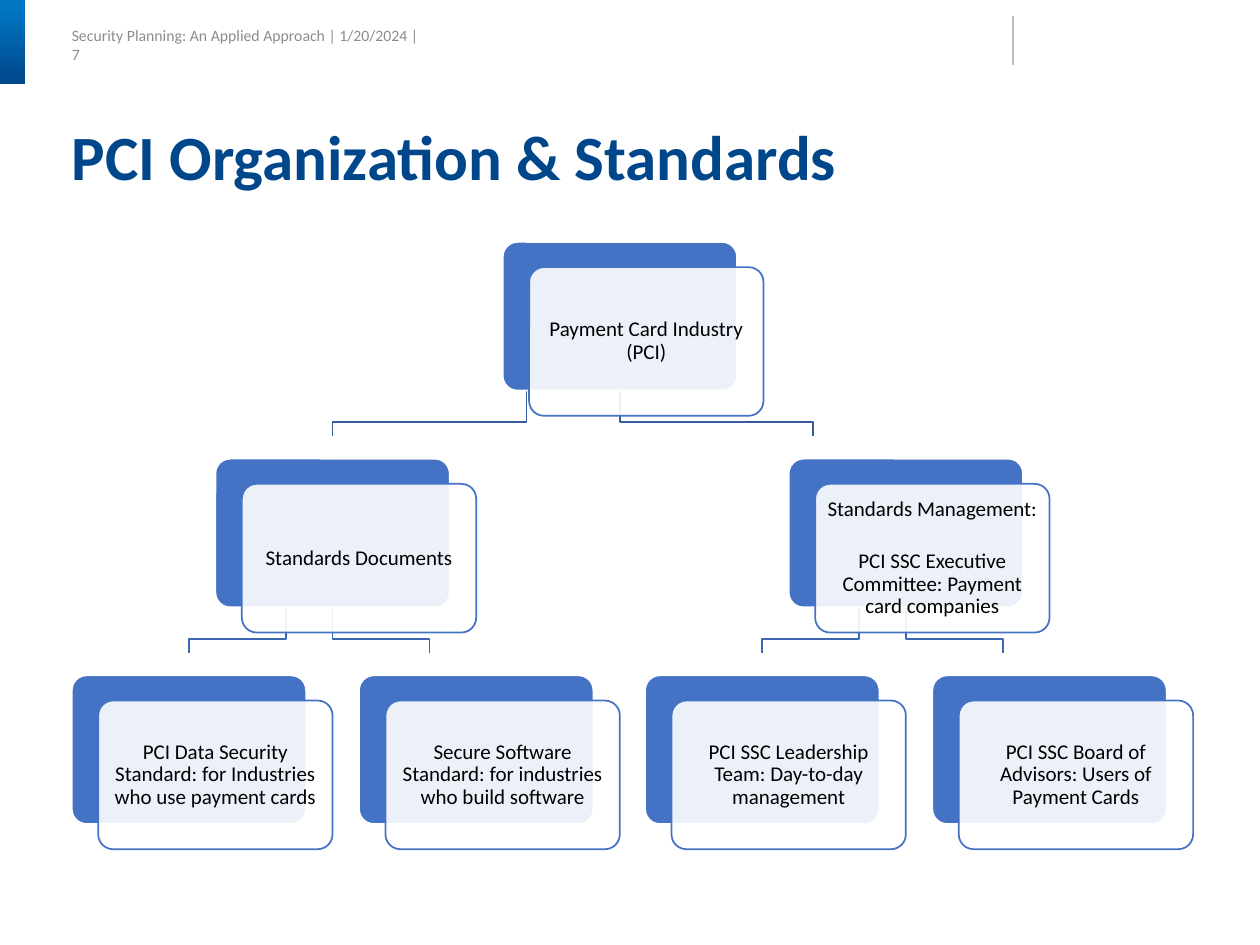
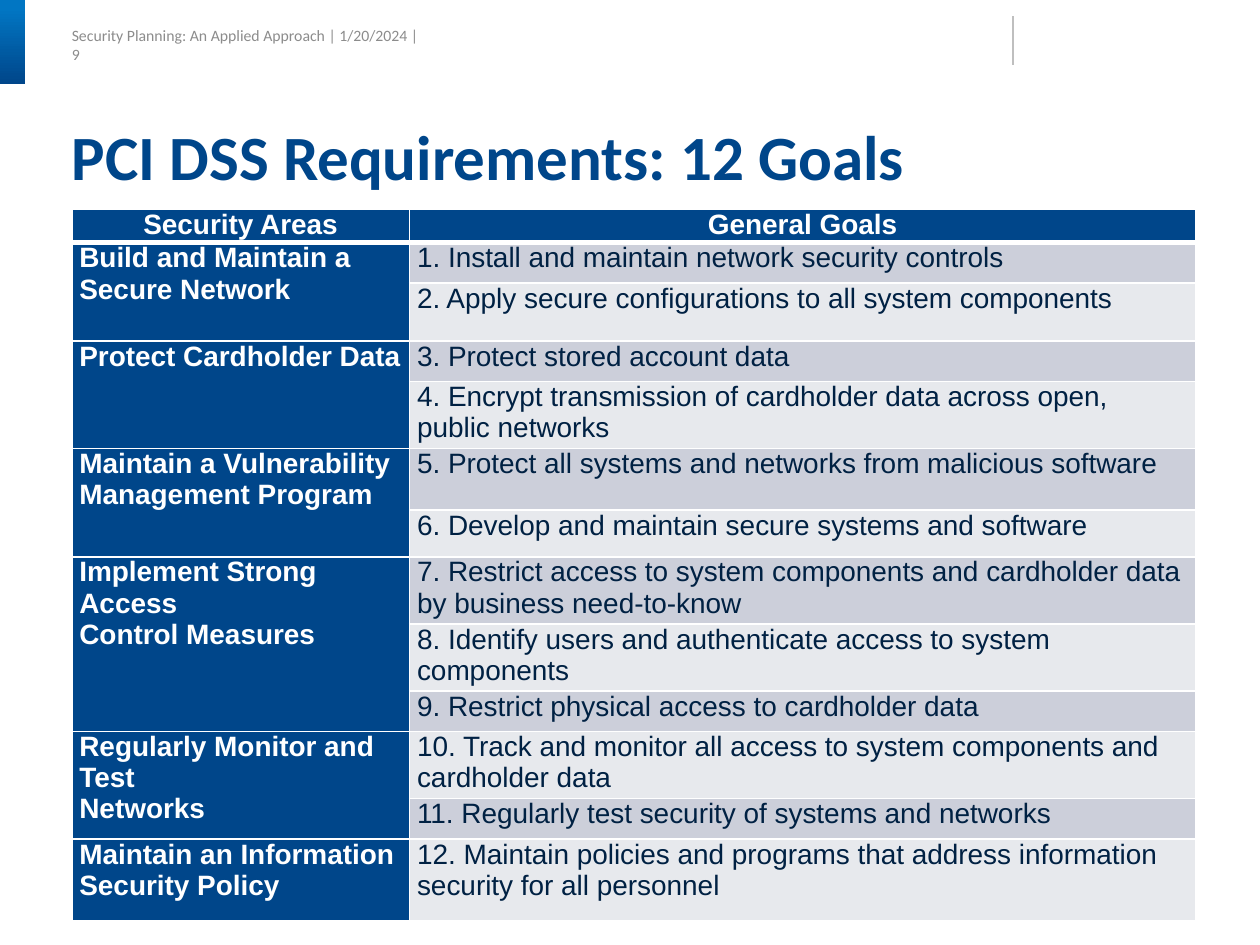
import dataclasses
import typing

import lxml.etree
import pptx
import pptx.dml.color
import pptx.enum.shapes
import pptx.enum.text
import pptx.oxml.ns
import pptx.util

PX = 9144  # EMU per px, 100 px to the inch
NAVY, BLUE, GREY, RULE = "00468A", "0176C3", "8C8C8C", "BFBFBF"
WHITE, BLACK, CARD, INK = "FFFFFF", "000000", "4472C4", "002143"
BANDS = ("E7E9ED", "CCCFDA")
LEFT, WIDTH = 57, 892
SHAPE = pptx.enum.shapes.MSO_SHAPE
ALIGN = pptx.enum.text.PP_ALIGN
ANCHOR = pptx.enum.text.MSO_ANCHOR

# Organization chart
CARD_W, CARD_H = 186, 118
LEAF_PITCH, LEVEL_PITCH, CHART_TOP = 227.6, 172, 192
FRONT_DX, FRONT_DY = 21, 20
BRANCH_REACH, BRANCH_BEND, BRANCH_DROP = 0.675, 25, 36
BRANCH_COLORS = ("365B9D", "3E67B2")


@dataclasses.dataclass
class Unit:
    text: str
    slot: int = 0
    children: tuple["Unit", ...] = ()

    @property
    def left(self) -> int:
        """Leaves stand on a grid; a parent is centred over its children."""
        if self.children:
            return (self.children[0].left + self.children[-1].left + 1) // 2
        return round(LEFT + LEAF_PITCH * self.slot)

    @property
    def center(self) -> int:
        return self.left + CARD_W // 2


@dataclasses.dataclass
class Area:
    name: str
    goals: tuple[str, ...]


ORGANIZATION = Unit("Payment Card Industry (PCI)", children=(
    Unit("Standards Documents", children=(
        Unit("PCI Data Security Standard: for Industries who use payment cards", 0),
        Unit("Secure Software Standard: for industries who build software", 1))),
    Unit("Standards Management:\nPCI SSC Executive Committee: Payment card companies", children=(
        Unit("PCI SSC Leadership Team: Day-to-day management", 2),
        Unit("PCI SSC Board of Advisors: Users of Payment Cards", 3))),
))

AREAS = (
    Area("Build and Maintain a Secure Network", (
        "Install and maintain network security controls",
        "Apply secure configurations to all system components")),
    Area("Protect Cardholder Data", (
        "Protect stored account data",
        "Encrypt transmission of cardholder data across open, public networks")),
    Area("Maintain a Vulnerability\nManagement Program", (
        "Protect all systems and networks from malicious software",
        "Develop and maintain secure systems and software")),
    Area("Implement Strong Access\nControl Measures", (
        "Restrict access to system components and cardholder data by business need-to-know",
        "Identify users and authenticate access to system components",
        "Restrict physical access to cardholder data")),
    Area("Regularly Monitor and Test\nNetworks", (
        "Track and monitor all access to system components and cardholder data",
        "Regularly test security of systems and networks")),
    Area("Maintain an Information\nSecurity Policy", (
        "Maintain policies and programs that address information security for all personnel",)),
)
COLUMN_WIDTHS = (268, 624)
ROW_HEIGHTS = (16, 32, 46, 32, 49, 49, 37, 49, 27, 32, 49, 32, 65)


def px(*lengths: float) -> list[pptx.util.Emu]:
    return [pptx.util.Emu(round(n * PX)) for n in lengths]


def rgb(color: str) -> pptx.dml.color.RGBColor:
    return pptx.dml.color.RGBColor.from_string(color)


def sub(parent: typing.Any, tag: str, **attrs: str) -> typing.Any:
    """Append a drawing element such as a:ln."""
    return lxml.etree.SubElement(parent, pptx.oxml.ns.qn(tag), **attrs)


def set_line(sp: typing.Any, color: str, points: float) -> None:
    sp.line.color.rgb = rgb(color)
    sp.line.width = pptx.util.Pt(points)


def write(tf: typing.Any, text: str, size: int, font: str, color: str, *,
          bold: bool = False, align: typing.Any = ALIGN.LEFT,
          spacing: float = 1.0, after: int = 0) -> None:
    """Fill a text frame with one paragraph per line of text."""
    for i, line in enumerate(text.split("\n")):
        p = tf.add_paragraph() if i else tf.paragraphs[0]
        p.text = line
        p.alignment, p.line_spacing = align, spacing
        p.space_after = pptx.util.Pt(after)
        p.font.size, p.font.name, p.font.bold = pptx.util.Pt(size), font, bold
        p.font.color.rgb = rgb(color)


def set_margins(frame: typing.Any, left: int, top: int, right: int, bottom: int) -> None:
    """Works for text frames and table cells."""
    (frame.margin_left, frame.margin_top,
     frame.margin_right, frame.margin_bottom) = px(left, top, right, bottom)


def add_base_slide(prs: typing.Any, title: str, number: int) -> typing.Any:
    """Add a slide with header line, corner tab, divider and title."""
    s = prs.slides.add_slide(prs.slide_layouts[6])

    tf = s.shapes.add_textbox(*px(LEFT, 23, 284, 23)).text_frame
    tf.word_wrap, tf.vertical_anchor = False, ANCHOR.MIDDLE
    set_margins(tf, 0, 2, 0, 0)
    write(tf, f"Security Planning: An Applied Approach | 1/20/2024 | {number}",
          9, "Calibri", GREY)

    tab = s.shapes.add_shape(SHAPE.RECTANGLE, *px(0, 0, 20, 67))
    tab.shadow.inherit = False
    tab.line.fill.background()
    tab.fill.gradient()
    tab.fill.gradient_angle = 270
    for stop, color, position in zip(tab.fill.gradient_stops, (BLUE, NAVY), (0.1, 1)):
        stop.color.rgb, stop.position = rgb(color), position

    divider = s.shapes.add_connector(
        pptx.enum.shapes.MSO_CONNECTOR.STRAIGHT, *px(804, 13, 804, 52))
    set_line(divider, RULE, 0.75)
    sub(divider._element.spPr, "a:effectLst")

    tf = s.shapes.add_textbox(*px(LEFT, 100, WIDTH, 55)).text_frame
    tf.word_wrap = True
    set_margins(tf, 0, 0, 0, 0)
    write(tf, title, 36, "Calibri", NAVY, bold=True, spacing=0.9)
    return s


def level_top(level: int) -> int:
    return CHART_TOP + LEVEL_PITCH * level


def add_branches(s: typing.Any, unit: Unit, level: int = 0) -> None:
    """Draw the elbows below a unit, then those of its children."""
    top = level_top(level) + CARD_H
    for child in unit.children:
        add_branches(s, child, level + 1)
        reach = round(abs(child.center - unit.center) * BRANCH_REACH)
        near = far = min(unit.center, child.center)
        if child.center < unit.center:
            near += reach
        else:
            far += reach
        builder = s.shapes.build_freeform(near, top, scale=float(PX))
        builder.add_line_segments(
            [(near, top + BRANCH_BEND), (far, top + BRANCH_BEND), (far, top + BRANCH_DROP)],
            close=False)
        elbow = builder.convert_to_shape()
        elbow.shadow.inherit = False
        elbow.fill.background()
        set_line(elbow, BRANCH_COLORS[level], 1)


def add_card(s: typing.Any, left: int, top: int, fill: str, line: str) -> typing.Any:
    sp = s.shapes.add_shape(SHAPE.ROUNDED_RECTANGLE, *px(left, top, CARD_W, CARD_H))
    sp.adjustments[0] = 0.1
    sp.shadow.inherit = False
    sp.fill.solid()
    sp.fill.fore_color.rgb = rgb(fill)
    set_line(sp, line, 1)
    return sp


def add_units(s: typing.Any, unit: Unit, level: int = 0) -> None:
    """Draw a unit as a blue card under a translucent one, then its children."""
    top = level_top(level)
    add_card(s, unit.left, top, CARD, WHITE)
    front = add_card(s, unit.left + FRONT_DX, top + FRONT_DY, WHITE, CARD)
    color = front._element.spPr.find(pptx.oxml.ns.qn("a:solidFill"))[0]
    sub(color, "a:alpha", val="90000")
    tf = front.text_frame
    tf.word_wrap, tf.vertical_anchor = True, ANCHOR.MIDDLE
    set_margins(tf, 4, 5, 4, 5)
    write(tf, unit.text, 12, "Calibri", BLACK, align=ALIGN.CENTER, spacing=0.9,
          after=17 if "\n" in unit.text else 0)
    for child in unit.children:
        add_units(s, child, level + 1)


def style_cell(cell: typing.Any, fill: str, top: int, bottom: int) -> None:
    """Set margins, white borders (widths in points) and fill."""
    set_margins(cell, 6, 0, 6, 0)
    tc_pr = cell._tc.get_or_add_tcPr()
    for side, points in zip("LRTB", (1, 1, top, bottom)):
        ln = sub(tc_pr, f"a:ln{side}", w=str(pptx.util.Pt(points)))
        sub(sub(ln, "a:solidFill"), "a:srgbClr", val=WHITE)
    cell.fill.solid()
    cell.fill.fore_color.rgb = rgb(fill)


def add_goals_table(s: typing.Any) -> None:
    table = s.shapes.add_table(
        len(ROW_HEIGHTS), 2, *px(LEFT, 166, WIDTH, sum(ROW_HEIGHTS))).table
    table.first_row = table.horz_banding = False
    for column, width in zip(table.columns, px(*COLUMN_WIDTHS)):
        column.width = width
    for i, height in enumerate(px(*ROW_HEIGHTS)):
        table.rows[i].height = height
        for j, fill in enumerate((NAVY, BANDS[i % 2] if i else NAVY)):
            style_cell(table.cell(i, j), fill, 3 if i == 1 else 1, 1 if i else 3)

    for j, heading in enumerate(("Security Areas", "General Goals")):
        write(table.cell(0, j).text_frame, heading, 16, "Arial", WHITE,
              bold=True, align=ALIGN.CENTER)
    row = 1
    for area in AREAS:
        name_cell = table.cell(row, 0)
        if len(area.goals) > 1:
            name_cell.merge(table.cell(row + len(area.goals) - 1, 0))
        write(name_cell.text_frame, area.name, 16, "Arial", WHITE, bold=True)
        for goal in area.goals:
            write(table.cell(row, 1).text_frame, f"{row}. {goal}", 16, "Arial", INK)
            row += 1


def main() -> None:
    prs = pptx.Presentation()
    prs.slide_width, prs.slide_height = px(1000, 750)

    s = add_base_slide(prs, "PCI Organization & Standards", 7)
    add_branches(s, ORGANIZATION)
    add_units(s, ORGANIZATION)

    s = add_base_slide(prs, "PCI DSS Requirements: 12 Goals", 9)
    add_goals_table(s)

    prs.save("out.pptx")


if __name__ == "__main__":
    main()
